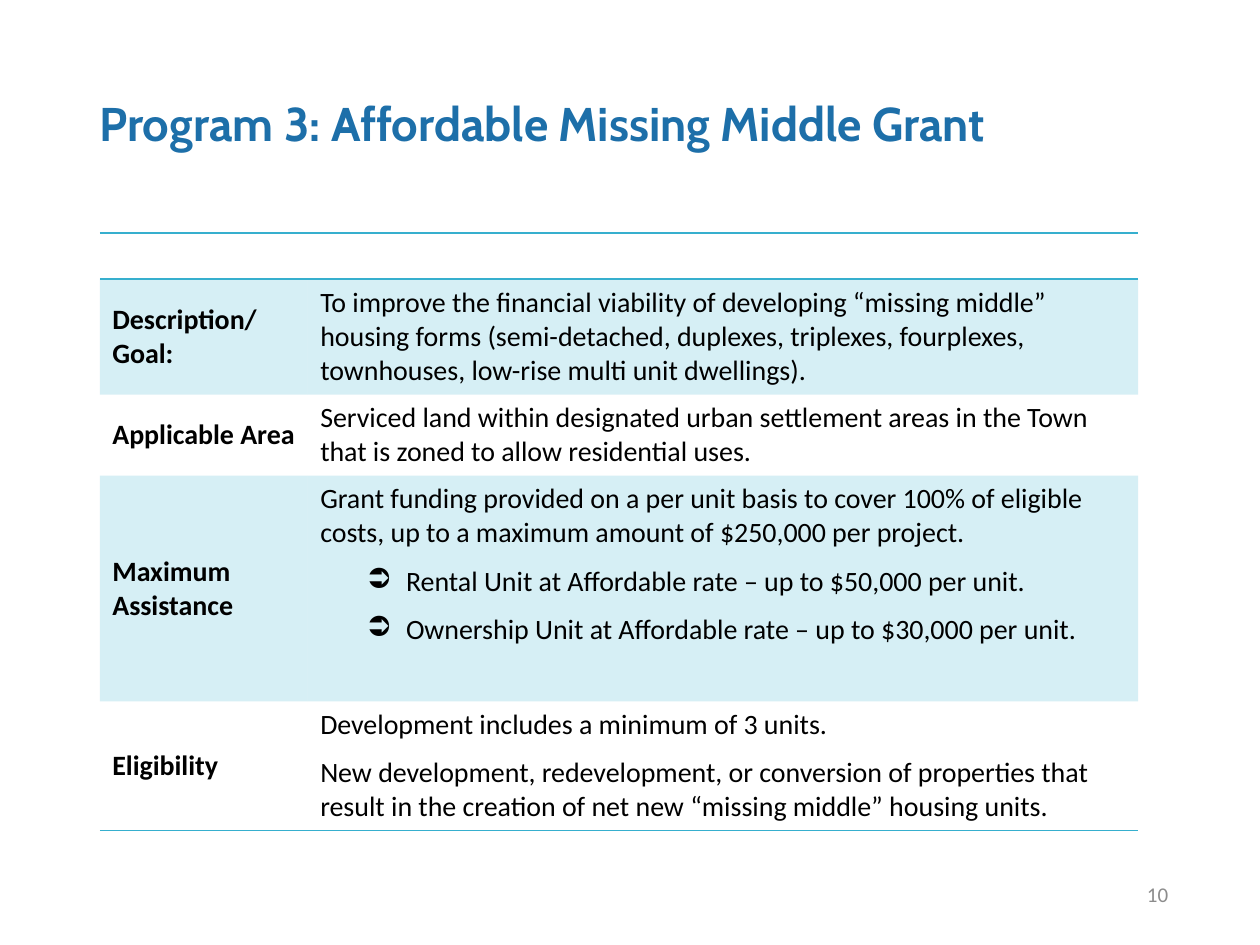
"""Build the Affordable Missing Middle Grant slide."""
from dataclasses import dataclass

from lxml import etree
from pptx import Presentation
from pptx.dml.color import RGBColor
from pptx.enum.text import MSO_ANCHOR, PP_ALIGN
from pptx.oxml.ns import qn
from pptx.util import Pt

MIDDLE, TOP = MSO_ANCHOR.MIDDLE, MSO_ANCHOR.TOP
LEFT, RIGHT = PP_ALIGN.LEFT, PP_ALIGN.RIGHT
PLAIN_TABLE_STYLE = "{2D5ABB26-0587-4C30-8999-92F81FD0307C}"
BULLET = "➲"


@dataclass(frozen=True)
class Theme:
    title_font: str = "Cabin"
    body_font: str = "Calibri"
    title_color: str = "1D6FA9"
    body_color: str = "000000"
    accent: str = "36AFCE"
    muted: str = "8C8C8C"
    title_size: float = 27
    body_size: float = 16
    number_size: float = 12
    band_opacity: int = 20
    rule_width: float = 1
    space_after: float = 8


@dataclass(frozen=True)
class Style:
    font: str
    size: float
    color: str
    bold: bool = False


@dataclass(frozen=True)
class GrantRow:
    label: str
    details: tuple[str, ...]
    height: float
    bullets: tuple[str, ...] = ()
    anchor: MSO_ANCHOR = MIDDLE


THEME = Theme()
TITLE = Style(THEME.title_font, THEME.title_size, THEME.title_color, True)
LABEL = Style(THEME.body_font, THEME.body_size, THEME.body_color, True)
BODY = Style(THEME.body_font, THEME.body_size, THEME.body_color)
NUMBER = Style(THEME.body_font, THEME.number_size, THEME.muted)

TABLE_LEFT, TABLE_TOP = 57, 133.2
COLUMN_WIDTHS = (118.8, 474.5)
SPACER_HEIGHT = 26.3
ROWS = (
    GrantRow("Description/ Goal:", (
        "To improve the financial viability of developing “missing middle” housing forms "
        "(semi-detached, duplexes, triplexes, fourplexes, townhouses, low-rise multi unit dwellings).",
    ), 66),
    GrantRow("Applicable Area", (
        "Serviced land within designated urban settlement areas in the Town that is zoned "
        "to allow residential uses.",
    ), 46.4),
    GrantRow("Maximum Assistance", (
        "Grant funding provided on a per unit basis to cover 100% of eligible costs, "
        "up to a maximum amount of $250,000 per project.",
    ), 129, (
        "Rental Unit at Affordable rate – up to $50,000 per unit.",
        "Ownership Unit at Affordable rate – up to $30,000 per unit.",
    ), TOP),
    GrantRow("Eligibility", (
        "Development includes a minimum of 3 units.",
        "New development, redevelopment, or conversion of properties that result in the "
        "creation of net new “missing middle” housing units.",
    ), 73.8),
)


def style_para(para, style: Style) -> None:
    for span in para.runs:
        span.font.name = style.font
        span.font.size = Pt(style.size)
        span.font.bold = style.bold
        span.font.color.rgb = RGBColor.from_string(style.color)


def add_text(page, text: str, frame: tuple[float, ...], style: Style,
             align: PP_ALIGN = LEFT, line_spacing: float = 1) -> None:
    box = page.shapes.add_textbox(*map(Pt, frame))
    box.text_frame.word_wrap = True
    box.text_frame.vertical_anchor = MIDDLE
    box.text_frame.text = text
    para = box.text_frame.paragraphs[0]
    para.alignment = align
    para.line_spacing = line_spacing
    style_para(para, style)


def add_bullet(para) -> None:
    properties = para._p.get_or_add_pPr()
    properties.set("marL", str(Pt(49)))
    properties.set("indent", str(Pt(-22.5)))
    etree.SubElement(properties, qn("a:buChar"), char=BULLET)


def fill_cell(cell, texts: tuple[str, ...], style: Style, anchor: MSO_ANCHOR,
              bullets: tuple[str, ...] = ()) -> None:
    cell.vertical_anchor = anchor
    cell.text_frame.text = "\n".join(texts + bullets)
    for index, para in enumerate(cell.text_frame.paragraphs):
        para.space_after = Pt(THEME.space_after)
        if index >= len(texts):
            add_bullet(para)
        style_para(para, style)


def add_rule(cell, side: str) -> None:
    line = etree.SubElement(cell._tc.get_or_add_tcPr(), qn(f"a:{side}"),
                            w=str(Pt(THEME.rule_width)))
    fill = etree.SubElement(line, qn("a:solidFill"))
    etree.SubElement(fill, qn("a:srgbClr"), val=THEME.accent)


def shade(cell, banded: bool) -> None:
    if not banded:
        cell.fill.background()
        return
    cell.fill.solid()
    cell.fill.fore_color.rgb = RGBColor.from_string(THEME.accent)
    color = cell._tc.tcPr.find(qn("a:solidFill")).find(qn("a:srgbClr"))
    etree.SubElement(color, qn("a:alpha"), val=str(THEME.band_opacity * 1000))


def add_grant_table(page) -> None:
    heights = (SPACER_HEIGHT, *(row.height for row in ROWS))
    table = page.shapes.add_table(
        len(heights), len(COLUMN_WIDTHS), Pt(TABLE_LEFT), Pt(TABLE_TOP),
        Pt(sum(COLUMN_WIDTHS)), Pt(sum(heights))).table
    table.first_row = table.horz_banding = False
    table._tbl.tblPr.find(qn("a:tableStyleId")).text = PLAIN_TABLE_STYLE
    for column, width in zip(table.columns, COLUMN_WIDTHS):
        column.width = Pt(width)
    for table_row, height in zip(table.rows, heights):
        table_row.height = Pt(height)
    for cell in table.rows[0].cells:
        cell.margin_top = cell.margin_bottom = 0
        add_rule(cell, "lnT")
        add_rule(cell, "lnB")
        shade(cell, False)
    for index, row in enumerate(ROWS, start=1):
        label, details = table.rows[index].cells
        fill_cell(label, (row.label,), LABEL, MIDDLE)
        fill_cell(details, row.details, BODY, row.anchor, row.bullets)
        for cell in (label, details):
            if index == len(ROWS):
                add_rule(cell, "lnB")
            shade(cell, index % 2 == 1)


def main() -> None:
    deck = Presentation()
    deck.slide_width, deck.slide_height = Pt(720), Pt(540)
    page = deck.slides.add_slide(deck.slide_layouts[6])
    add_text(page, "Program 3: Affordable Missing Middle Grant",
             (49.7, 28.8, 620.6, 87.1), TITLE, line_spacing=0.9)
    add_grant_table(page)
    add_text(page, "10", (512.6, 496.8, 162, 28.8), NUMBER, RIGHT)
    deck.save("out.pptx")


if __name__ == "__main__":
    main()
